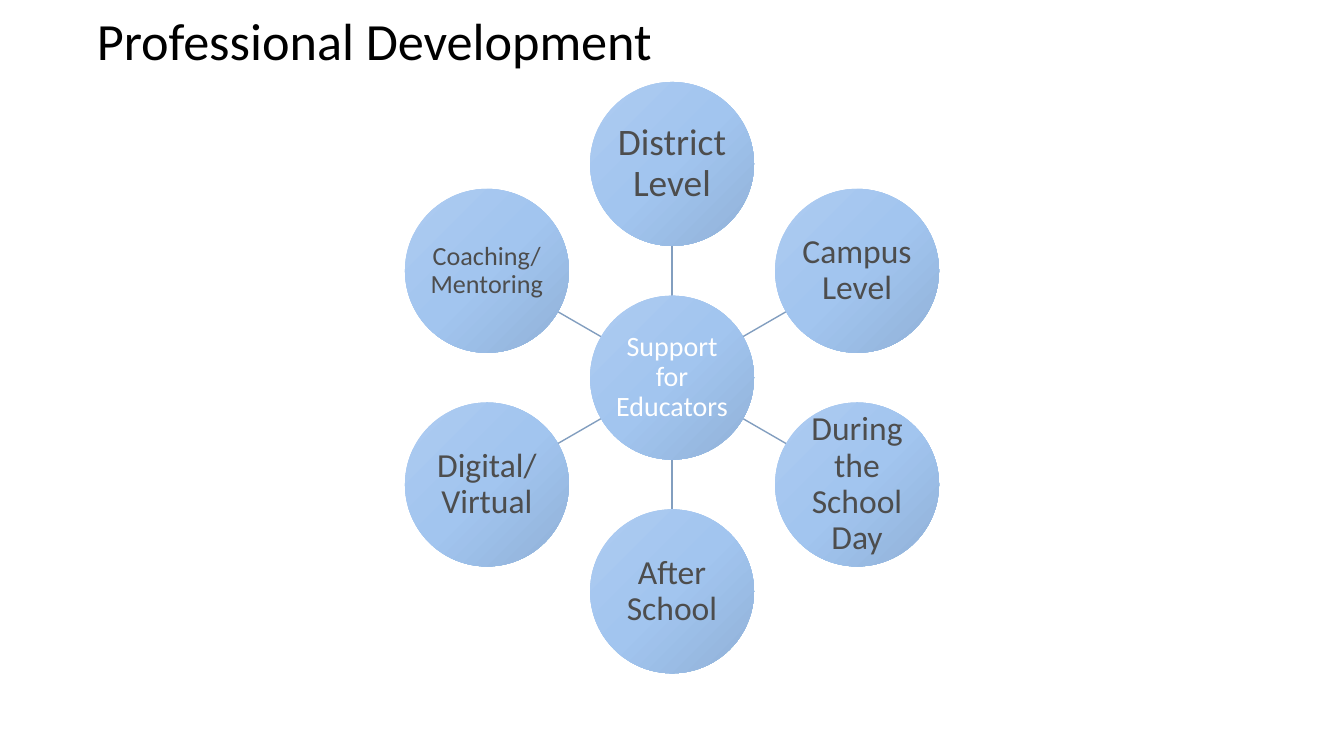
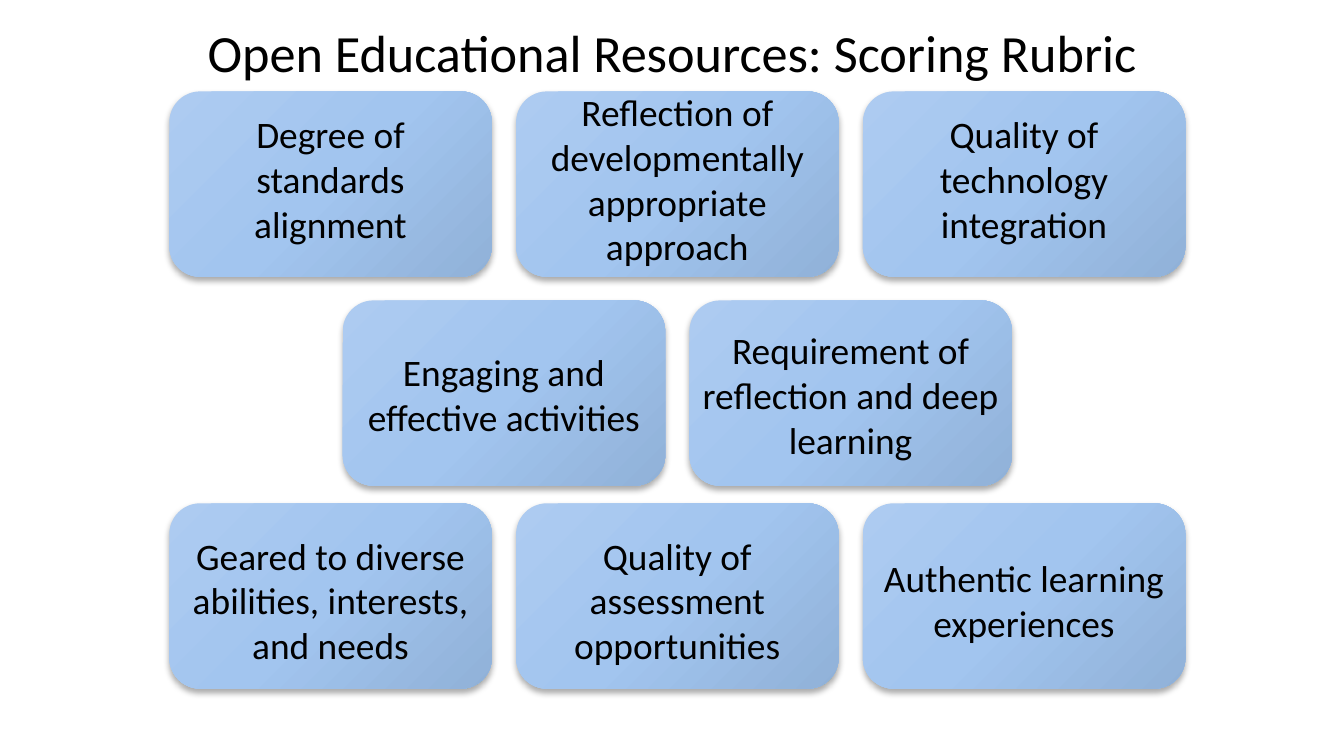
from copy import deepcopy
from dataclasses import dataclass
from math import cos, radians, sin

from lxml.etree import SubElement
from pptx import Presentation
from pptx.dml.color import RGBColor
from pptx.enum.shapes import MSO_CONNECTOR, MSO_SHAPE
from pptx.enum.text import MSO_ANCHOR, MSO_AUTO_SIZE, PP_ALIGN
from pptx.oxml.ns import qn
from pptx.util import Inches, Pt


@dataclass(frozen=True)
class Theme:
    font: str = "Calibri"
    ink: str = "000000"
    grey: str = "4D4D4D"
    white: str = "FFFFFF"
    spoke: str = "829EBF"
    blues: tuple = ("ADCBF1", "A2C5EF", "90B1D8")
    title: int = 28
    card: int = 20
    hub: int = 15


theme = Theme()
deck = Presentation()
deck.slide_width = Inches(10)
deck.slide_height = Inches(5.625)
unit = deck.slide_width // 100  # the grid has 100 columns, with square cells


def write(shape, text, size, color, lead=1.0):
    """Fill a shape with one centred paragraph."""
    shape.text_frame.text = text
    line = shape.text_frame.paragraphs[0]
    line.alignment = PP_ALIGN.CENTER
    line.line_spacing = lead
    line.font.name = theme.font
    line.font.size = Pt(size)
    line.font.color.rgb = RGBColor.from_string(color)


def add_blue(slide, kind, left, top, width, height):
    """Add a shape with the blue gradient, placed in grid units."""
    box = [round(n * unit) for n in (left, top, width, height)]
    shape = slide.shapes.add_shape(kind, *box)
    shape.shadow.inherit = False
    shape.line.fill.background()
    shape.fill.gradient()
    shape.fill.gradient_angle = 315
    stops = shape.element.spPr.find(".//" + qn("a:gsLst"))
    stops.append(deepcopy(stops[0]))
    for stop, blue, place in zip(shape.fill.gradient_stops, theme.blues, (0, 0.5, 1)):
        stop.color.rgb = RGBColor.from_string(blue)
        stop.position = place
    shape.text_frame.word_wrap = True
    shape.text_frame.vertical_anchor = MSO_ANCHOR.MIDDLE
    return shape


# Both slides and their titles
slides = []
for text, left, top, width in (
    ("Professional Development", 6, 0.1, 43.7),
    ("Open Educational Resources: Scoring Rubric", 13.2, 1, 73.6),
):
    slide = deck.slides.add_slide(deck.slide_layouts[5])
    title = slide.shapes.title
    title.left, title.top = round(left * unit), round(top * unit)
    title.width, title.height = round(width * unit), round(5.7 * unit)
    title.text_frame.auto_size = MSO_AUTO_SIZE.NONE
    title.text_frame.word_wrap = False
    title.text_frame.vertical_anchor = MSO_ANCHOR.TOP
    write(title, text, theme.title, theme.ink)
    slides.append(slide)
wheel, rubric = slides

# Wheel: a hub with six topics, clockwise from the top
mid_x, mid_y = 50, 28.1
disc, reach = 12.2, 15.9
topics = (
    ("District Level", 20),
    ("Campus Level", 18),
    ("During the School Day", 18),
    ("After School", 18),
    ("Digital/Virtual", 18),
    ("Coaching/Mentoring", 14),
)
discs = [("Support for Educators", theme.hub, theme.white, mid_x, mid_y)]
for i, (text, size) in enumerate(topics):
    turn = radians(360 / len(topics) * i - 90)
    dx, dy = cos(turn), sin(turn)
    discs.append((text, size, theme.grey, mid_x + reach * dx, mid_y + reach * dy))
    ends = [
        round(n * unit)
        for far in (disc / 2, reach - disc / 2)
        for n in (mid_x + far * dx, mid_y + far * dy)
    ]
    spoke = wheel.shapes.add_connector(MSO_CONNECTOR.STRAIGHT, *ends)
    spoke.line.color.rgb = RGBColor.from_string(theme.spoke)
    spoke.line.width = Pt(0.75)
    SubElement(spoke.element.spPr, qn("a:effectLst"))

for text, size, color, x, y in discs:
    shape = add_blue(wheel, MSO_SHAPE.OVAL, x - disc / 2, y - disc / 2, disc, disc)
    frame = shape.text_frame
    frame.margin_left = frame.margin_right = Inches(0.01)
    frame.margin_top = frame.margin_bottom = Inches(0.01)
    write(shape, text, size, color, 0.9)

# Rubric: rows of three, two and three cards, each row centred
card_w, card_h, step = 24, 13.8, 25.8
center = 50.4
rows = (
    (6.8, 0, 0.08, (
        "Degree of standards alignment",
        "Reflection of developmentally appropriate approach",
        "Quality of technology integration",
    )),
    (22.35, 0.02, 0, (
        "Engaging and effective activities",
        "Requirement of reflection and deep learning",
    )),
    (37.45, 0.06, 0, (
        "Geared to diverse abilities, interests, and needs",
        "Quality of assessment opportunities",
        "Authentic learning experiences",
    )),
)
for top, above, below, texts in rows:
    start = center - ((len(texts) - 1) * step + card_w) / 2
    for i, text in enumerate(texts):
        card = add_blue(
            rubric, MSO_SHAPE.ROUNDED_RECTANGLE, start + i * step, top, card_w, card_h
        )
        shade = SubElement(
            card.element.spPr.find(qn("a:effectLst")), qn("a:outerShdw"),
            blurRad=str(Pt(3.5)), dist=str(Pt(2.2)), dir="5400000", rotWithShape="0",
        )
        black = SubElement(shade, qn("a:srgbClr"), val=theme.ink)
        SubElement(black, qn("a:alpha"), val="32000")
        frame = card.text_frame
        frame.margin_left = frame.margin_right = Inches(0.02)
        frame.margin_top, frame.margin_bottom = Inches(above), Inches(below)
        write(card, text, theme.card, theme.ink)

deck.save("out.pptx")
